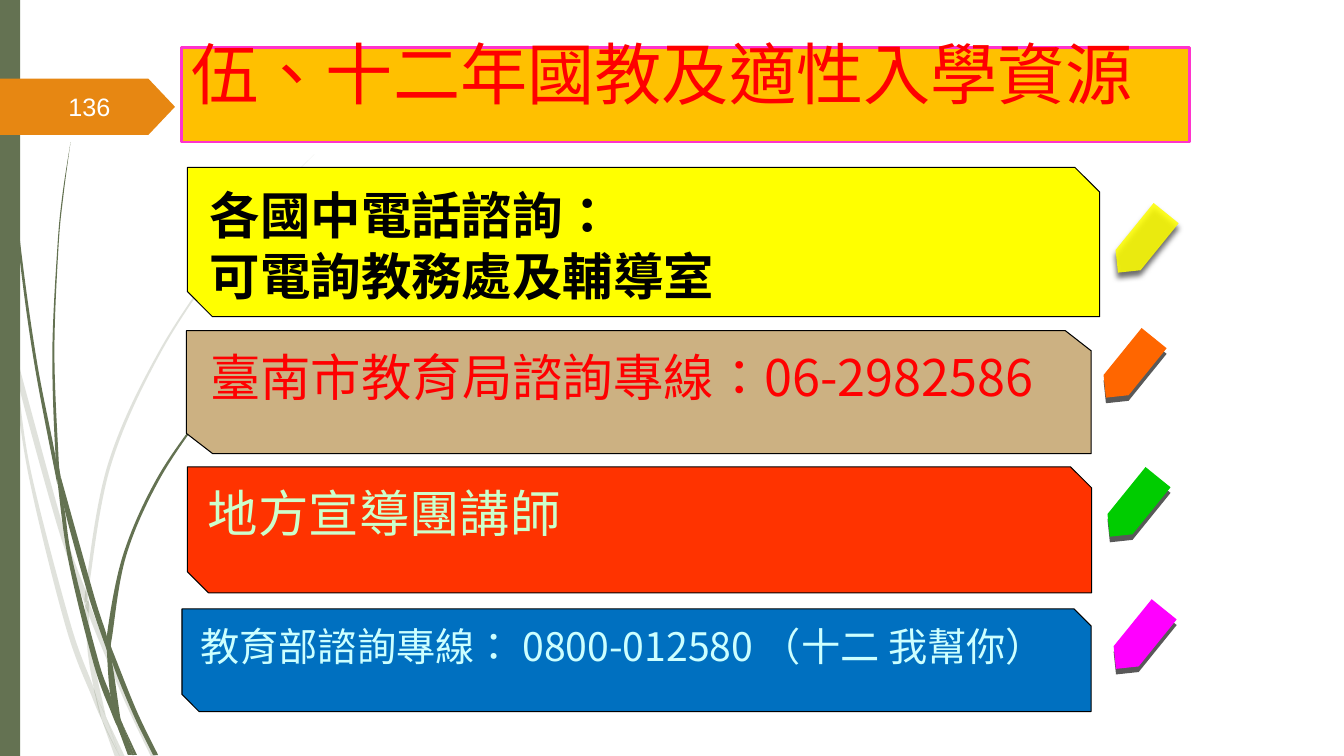
from dataclasses import dataclass

from lxml import etree
from pptx import Presentation
from pptx import util as u
from pptx.dml.color import RGBColor
from pptx.enum import lang, shapes, text
from pptx.oxml import ns

CJK = "Noto Sans CJK SC"
GREEN = "647252"
SNIP = shapes.MSO_SHAPE.SNIP_2_DIAG_RECTANGLE


@dataclass
class Banner:
    place: tuple  # left, top, width, height
    fill: str
    ink: str
    lines: list
    size: int = 36
    bold: bool = False
    outline: tuple = ()
    insets: tuple = (7.2, 3.6)
    leading: float = 0


@dataclass
class Marker:
    left: float
    top: float
    fill: str
    alpha: int = 100
    blur: float = 0


@dataclass
class Blade:
    left: list  # edge points, top to bottom
    right: list


def set_fill(shape, color: str, alpha: int = 100) -> None:
    shape.fill.solid()
    shape.fill.fore_color.rgb = RGBColor.from_string(color)
    if alpha < 100:
        tint = shape._element.spPr.find(".//" + ns.qn("a:srgbClr"))
        etree.SubElement(tint, ns.qn("a:alpha")).set("val", str(alpha * 1000))


def style(shape, fill: str, alpha: int = 100, line: str = "", weight: float = 0.75) -> None:
    set_fill(shape, fill, alpha)
    if line:
        shape.line.color.rgb = RGBColor.from_string(line)
        shape.line.width = u.Pt(weight)
    else:
        shape.line.fill.background()
    shape.shadow.inherit = False


def add_preset(page, kind, place: tuple):
    return page.shapes.add_shape(kind, *(u.Pt(value) for value in place))


def add_outline(page, points: list):
    corners = [(u.Pt(x), u.Pt(y)) for x, y in points]
    builder = page.shapes.build_freeform(*corners[0])
    builder.add_line_segments(corners[1:], close=True)
    return builder.convert_to_shape()


def write(shape, lines: list, *, size: float, color: str, font: str = CJK, bold: bool = False,
          anchor=text.MSO_ANCHOR.TOP, insets: tuple = (7.2, 3.6), leading: float = 0) -> None:
    frame = shape.text_frame
    frame.word_wrap = True
    frame.vertical_anchor = anchor
    frame.margin_left, frame.margin_top = (u.Pt(inset) for inset in insets)
    frame.margin_right, frame.margin_bottom = u.Pt(7.2), u.Pt(3.6)
    for index, line in enumerate(lines):
        para = frame.add_paragraph() if index else frame.paragraphs[0]
        para.alignment = text.PP_ALIGN.LEFT
        if leading:
            para.line_spacing = u.Pt(leading)
        span = para.add_run()
        span.text = line
        span.font.size, span.font.bold, span.font.name = u.Pt(size), bold, font
        span.font.color.rgb = RGBColor.from_string(color)
        span.font.language_id = lang.MSO_LANGUAGE_ID.TRADITIONAL_CHINESE
        etree.SubElement(span._r.get_or_add_rPr(), ns.qn("a:ea")).set("typeface", font)


def draw_blade(page, blade: Blade, alpha: int) -> None:
    """Draw a closed outline whose two edges are smooth curves through their points."""
    shape = add_outline(page, blade.left + blade.right[::-1])
    path = shape._element.spPr.find(".//" + ns.qn("a:path"))
    spots = [(int(pt.get("x")), int(pt.get("y"))) for pt in path.iter(ns.qn("a:pt"))]
    split, total = len(blade.left), len(blade.left) + len(blade.right)
    segments = path.findall(ns.qn("a:lnTo"))
    for first, stop in ((0, split), (split, total)):
        for end in range(first + 1, stop):
            before, start = spots[max(end - 2, first)], spots[end - 1]
            goal, after = spots[end], spots[min(end + 1, stop - 1)]
            lead = [round(s + (g - b) / 6) for b, s, g in zip(before, start, goal)]
            trail = [round(g - (a - s) / 6) for s, g, a in zip(start, goal, after)]
            curve = etree.Element(ns.qn("a:cubicBezTo"))
            for x, y in (lead, trail, goal):
                etree.SubElement(curve, ns.qn("a:pt"), x=str(x), y=str(y))
            path.replace(segments[end - 1], curve)
    style(shape, GREEN, alpha)


PALE_BLADES = [
    Blade([(0, 215.3), (7.2, 247.7), (7.9, 252)], [(0, 203), (5.8, 231.8), (7.9, 252)]),
    Blade([(10.1, 248.4), (12.2, 270.7), (41, 375.8), (60.5, 431.3)],
          [(10.1, 248.4), (44.6, 374.4), (61.2, 421.9)]),
    Blade([(63.4, 429.1), (63.4, 439.2), (88.6, 499.7), (108, 540.7)],
          [(63.4, 429.1), (66.2, 437), (91.4, 498.2), (111.6, 540.7)]),
    Blade([(75.6, 511.9), (85.7, 540.7)], [(75.6, 511.9), (89.3, 540.7)]),
    Blade([(7.9, 252), (20.2, 338.4), (46.8, 447.1), (66.2, 499), (72.7, 514.1)],
          [(7.9, 252), (12.2, 270.7), (22.3, 337.7), (50.4, 445.7), (67, 491.8), (72.7, 514.1)]),
    Blade([(60.5, 431.3), (62.6, 465.1), (67, 491.8), (69.1, 498.2), (75.6, 511.9)],
          [(60.5, 431.3), (63.4, 439.2), (65.5, 465.1), (74.9, 508.3), (75.6, 511.9)]),
    Blade([(224.6, 110.2), (193, 141.8), (164.2, 175.7), (113.8, 250.6), (77, 331.9),
           (61.2, 420.5), (63.4, 429.1)],
          [(224.6, 110.2), (193, 142.6), (164.9, 176.4), (115.2, 251.3), (79.2, 332.6),
           (63.4, 420.5), (63.4, 429.1)]),
    Blade([(72.7, 514.1), (82.1, 540.7)], [(72.7, 514.1), (85.7, 540.7)]),
    Blade([(61.2, 421.9), (60.5, 431.3), (63.4, 437.8)],
          [(61.2, 421.9), (63.4, 429.1), (63.4, 439.2)]),
    Blade([(67, 491.8), (72.7, 514.1), (85.7, 540.7)],
          [(67, 491.8), (69.1, 498.2), (75.6, 511.9), (85.7, 540.7)]),
]

DARK_BLADES = [
    Blade([(2.2, 0), (2.2, 34.6), (5, 79.2), (12.2, 167.8), (23.8, 255.6), (41, 346.3)],
          [(2.2, 0), (3.6, 34.6), (5.8, 78.5), (13.7, 167), (25.9, 255.6), (39.6, 326.2),
           (41, 346.3)]),
    Blade([(43.2, 339.8), (46.1, 363.6), (63.4, 426.2), (76.3, 464.4)],
          [(43.2, 339.8), (67, 424.8), (76.3, 454.3), (76.3, 464.4)]),
    Blade([(79.2, 461.5), (79.9, 472.3), (95, 509.8), (109.4, 539.3)],
          [(79.2, 461.5), (81.4, 467.3), (97.9, 508.3), (113, 539.3)]),
    Blade([(41, 343.4), (49, 401), (67, 474.5), (79.9, 509.8), (84.2, 519.8)],
          [(41, 343.4), (46.1, 363.6), (51.8, 400.3), (70.6, 473), (79.2, 497.5), (84.2, 519.8)]),
    Blade([(50.4, 101.5), (44.6, 139), (41, 176.4), (37.4, 251.3), (39.6, 323.3), (43.2, 339.8)],
          [(50.4, 101.5), (45.4, 139), (41.8, 176.4), (38.9, 251.3), (41.8, 326.2),
           (43.2, 339.8)]),
    Blade([(87.8, 517.7), (95.8, 539.3)], [(87.8, 517.7), (97.9, 539.3)]),
    Blade([(39.6, 323.3), (41, 343.4), (46.1, 363.6)], [(39.6, 323.3), (43.2, 339.8), (46.1, 363.6)]),
    Blade([(187.2, 247.7), (166.3, 268.6), (146.9, 291.6), (112.3, 341.3), (87.8, 396.7),
           (76.3, 454.3), (79.2, 461.5)],
          [(187.9, 247.7), (166.3, 269.3), (147.6, 292.3), (113.8, 342.7), (90, 397.4),
           (79.9, 455.8), (79.2, 461.5)]),
    Blade([(84.2, 519.8), (91.4, 539.3)], [(84.2, 519.8), (94.3, 539.3)]),
    Blade([(76.3, 464.4), (79.2, 498.2), (87.8, 517.7)],
          [(76.3, 464.4), (79.9, 472.3), (86.4, 515.5), (87.8, 517.7)]),
    Blade([(76.3, 454.3), (76.3, 464.4), (79.9, 472.3)],
          [(76.3, 454.3), (79.2, 461.5), (79.9, 472.3)]),
    Blade([(79.2, 497.5), (84.2, 519.8), (94.3, 539.3)],
          [(79.2, 497.5), (87.8, 517.7), (95.8, 539.3)]),
]

BANNERS = [
    Banner((130, 434.9, 649.4, 73.4), "0070C0", "CCFFFF",
           ["教育部諮詢專線： 0800-012580 （十二 我幫你）"], size=28),
    Banner((133.9, 333.4, 645.8, 90), "FF3300", "CCFFCC", ["地方宣導團講師"]),
    Banner((133.9, 119.5, 651.6, 106.6), "FFFF00", "000000",
           ["各國中電話諮詢：", "可電詢教務處及輔導室"], bold=True, leading=43),
    Banner((133.2, 236.2, 646.6, 87.8), "CCB182", "FF0000",
           ["臺南市教育局諮詢專線：06-2982586"], insets=(16.8, 11),
           outline=((133.2, 236.2), (761, 236.2), (779.4, 250.6), (779.4, 324),
                    (151.9, 324), (133.2, 309.6))),
]

MARKERS = [Marker(788.4, 162, "FFFF00", 86, 4), Marker(779.8, 251.3, "FF6600"),
           Marker(782.6, 350.6, "00CC00"), Marker(787, 445, "FF00FF")]


def draw_banner(page, banner: Banner) -> None:
    box = add_outline(page, banner.outline) if banner.outline else add_preset(page, SNIP, banner.place)
    style(box, banner.fill, line="000000")
    write(box, banner.lines, size=banner.size, color=banner.ink, bold=banner.bold,
          insets=banner.insets, leading=banner.leading)


def draw_marker(page, marker: Marker) -> None:
    pentagon = add_preset(page, shapes.MSO_SHAPE.PENTAGON, (marker.left, marker.top, 54.7, 23))
    pentagon.rotation = 129
    style(pentagon, marker.fill, marker.alpha)
    effects = pentagon._element.spPr.find(ns.qn("a:effectLst"))
    shadow = etree.SubElement(effects, ns.qn("a:outerShdw"), blurRad=str(u.Pt(marker.blur)),
                              dist=str(u.Pt(4)), dir="5400000", rotWithShape="0")
    etree.SubElement(shadow, ns.qn("a:srgbClr"), val="595959")


def main() -> None:
    deck = Presentation()
    deck.slide_width, deck.slide_height = u.Pt(960), u.Pt(540)
    page = deck.slides.add_slide(deck.slide_layouts[6])
    # Grass blades and side bar
    for blades, alpha in ((PALE_BLADES, 20), (DARK_BLADES, 100)):
        for blade in blades:
            draw_blade(page, blade, alpha)
    style(add_preset(page, shapes.MSO_SHAPE.RECTANGLE, (0, 0, 14.4, 540)), GREEN)
    # Page number tag
    tag = [(-0.5, 56.2), (106, 56.2), (125, 76.3), (106, 96.4), (-0.5, 96.4)]
    style(add_outline(page, tag), "E78712")
    number = page.shapes.add_textbox(*(u.Pt(value) for value in (41.8, 61.9, 61.2, 28.8)))
    write(number, ["136"], size=18, color="FFFFFF", font="Arial", anchor=text.MSO_ANCHOR.MIDDLE)
    # Title
    title = add_preset(page, shapes.MSO_SHAPE.RECTANGLE, (129.8, 33.8, 720, 67.7))
    style(title, "FFC000", line="FF33CC", weight=2)
    write(title, ["伍、十二年國教及適性入學資源"], size=48, color="FF0000",
          anchor=text.MSO_ANCHOR.MIDDLE, leading=26)
    # Contact banners and their markers
    for banner in BANNERS:
        draw_banner(page, banner)
    for marker in MARKERS:
        draw_marker(page, marker)
    deck.save("out.pptx")


if __name__ == "__main__":
    main()
